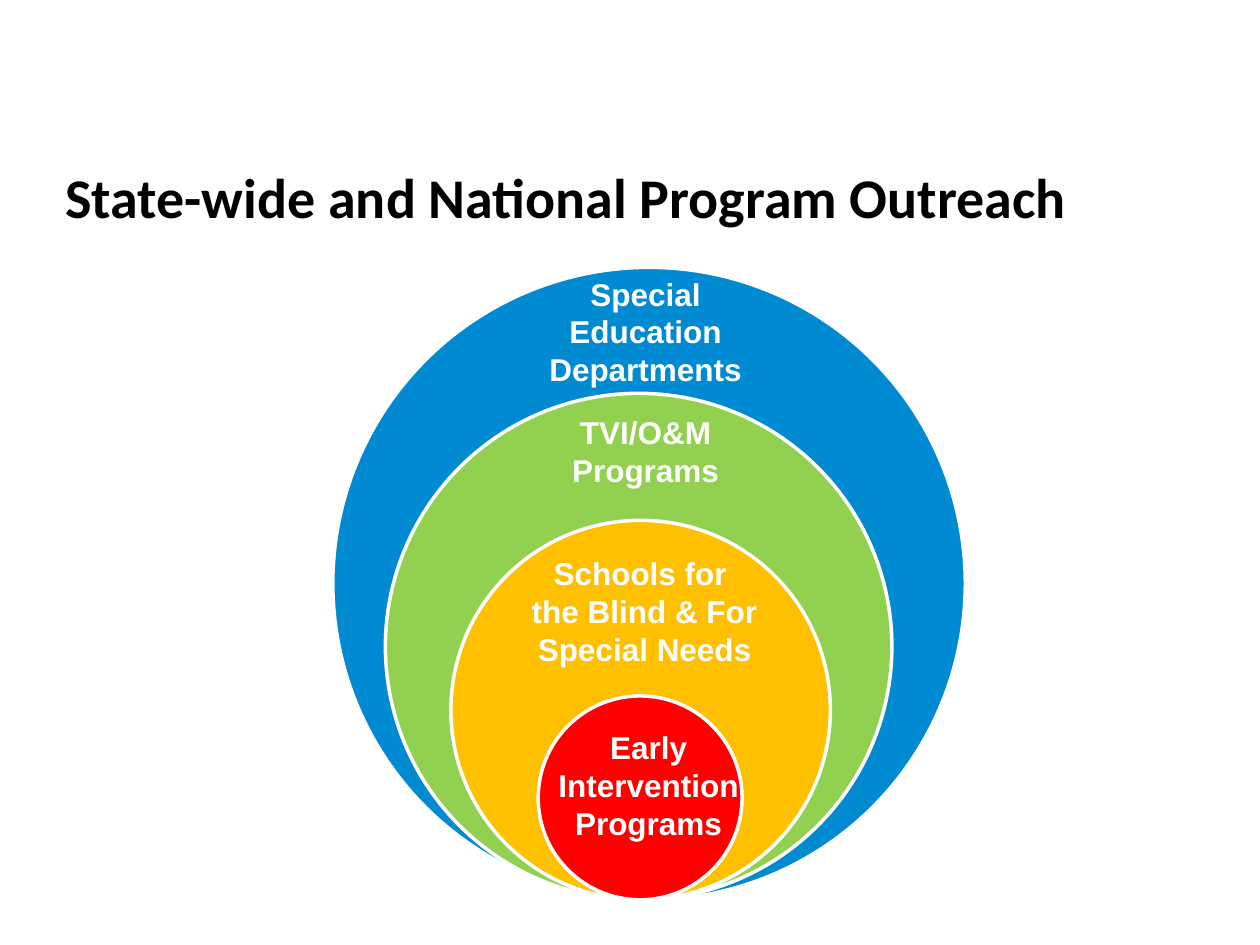
from pptx import Presentation
from pptx.dml.color import RGBColor
from pptx.enum.shapes import MSO_SHAPE as SHAPE
from pptx.enum.text import MSO_ANCHOR as ANCHOR, PP_ALIGN as ALIGN
from pptx.util import Cm, Pt


def color(value):
    return RGBColor.from_string(value)


def add_text(s, box, lines, font, size, hue, align, anchor):
    tf = s.shapes.add_textbox(*[Cm(v) for v in box]).text_frame
    tf.word_wrap = True
    tf.vertical_anchor = anchor
    tf.text = "\n".join(lines)
    for p in tf.paragraphs:
        p.alignment = align
        p.font.name = font
        p.font.size = Pt(size)
        p.font.bold = True
        p.font.color.rgb = color(hue)


prs = Presentation()
prs.slide_width, prs.slide_height = Cm(25.4), Cm(19.05)
s = prs.slides.add_slide(prs.slide_layouts[6])

# Title
add_text(s, (1.07, 2.72, 23.95, 2.03), ["State-wide and National Program Outreach"],
         "Calibri", 32, "000000", ALIGN.LEFT, ANCHOR.BOTTOM)

# Nested circles resting on a common bottom: left, diameter, fill
BOTTOM = 18.14
circles = [
    (6.71, 12.75, "008AD1"),
    (7.77, 10.21, "92D050"),
    (9.09, 7.65, "FFC000"),
    (10.85, 4.11, "FF0000"),
]
for left, size, fill in circles:
    sp = s.shapes.add_shape(SHAPE.OVAL, Cm(left), Cm(BOTTOM - size), Cm(size), Cm(size))
    sp.shadow.inherit = False
    sp.fill.solid()
    sp.fill.fore_color.rgb = color(fill)
    sp.line.color.rgb = color("FFFFFF")
    sp.line.width = Pt(2)

# Circle labels: box, lines
labels = [
    ((10.13, 5.41, 5.77, 2.57), ["Special Education Departments"]),
    ((10.13, 8.2, 5.77, 1.8), ["TVI/O&M", "Programs"]),
    ((9.91, 11.05, 6.17, 2.57), ["Schools for ", "the Blind & For Special Needs"]),
    ((10.19, 14.55, 5.77, 2.57), ["Early", "Intervention", "Programs"]),
]
for box, lines in labels:
    add_text(s, box, lines, "Arial", 18, "FFFFFF", ALIGN.CENTER, ANCHOR.TOP)

prs.save("out.pptx")
